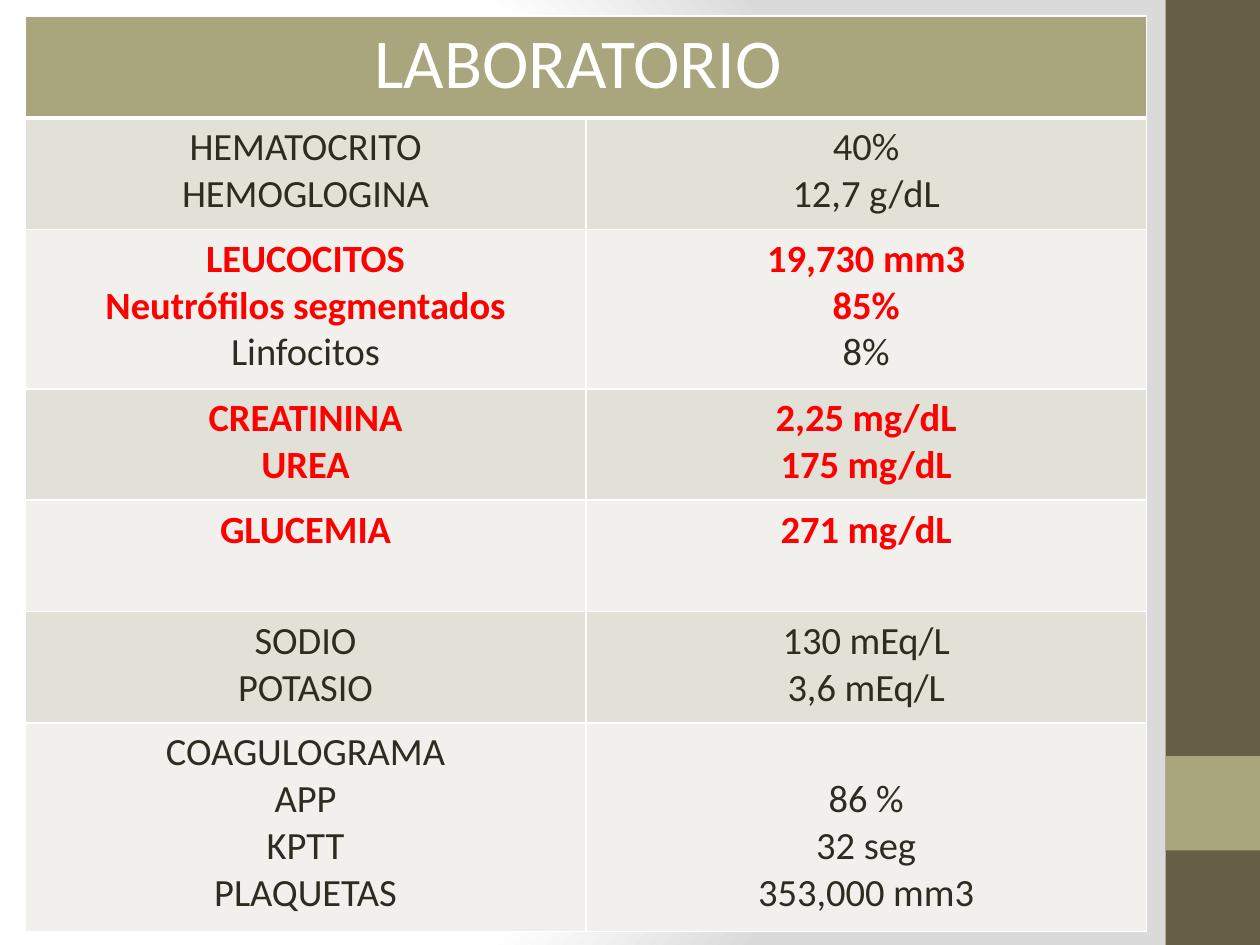
from pptx import Presentation
from pptx.dml.color import RGBColor
from pptx.enum.shapes import MSO_SHAPE
from pptx.enum.text import PP_ALIGN
from pptx.oxml import parse_xml
from pptx.oxml.ns import nsdecls, qn
from pptx.util import Pt

WHITE = RGBColor(0xFF, 0xFF, 0xFF)
INK = RGBColor(0x2F, 0x2B, 0x20)
RED = RGBColor(0xFF, 0x00, 0x00)
BROWN = RGBColor(0x67, 0x5E, 0x47)
OLIVE = RGBColor(0xA9, 0xA5, 0x7C)
BAND_DARK = RGBColor(0xE2, 0xE1, 0xD7)
BAND_LIGHT = RGBColor(0xF1, 0xF0, 0xEC)
GREY = RGBColor(0xDA, 0xDA, 0xDA)

NORMAL = {"size": Pt(22), "bold": False, "name": "Calibri"}
ALERT = {**NORMAL, "bold": True}
TITLE = {**NORMAL, "size": Pt(40)}
LINE_HEIGHT = 26.85
MARGIN = 3.6

# Row height, number of leading lines out of range, names, results
RESULTS = [
    (63.6, 0, ["HEMATOCRITO", "HEMOGLOGINA"], ["40%", "12,7 g/dL"]),
    (91.2, 2, ["LEUCOCITOS", "Neutrófilos segmentados", "Linfocitos"],
     ["19,730 mm3", "85%", "8%"]),
    (63.6, 2, ["CREATININA", "UREA"], ["2,25 mg/dL", "175 mg/dL"]),
    (63.6, 1, ["GLUCEMIA"], ["271 mg/dL"]),
    (63.6, 0, ["SODIO", "POTASIO"], ["130 mEq/L", "3,6 mEq/L"]),
    (119.4, 0, ["COAGULOGRAMA", "APP", "KPTT", "PLAQUETAS"],
     ["86 %", "32 seg", "353,000 mm3"]),
]


def style_cell(cell, fill, bottom=1):
    """Give the cell white borders and a solid fill; bottom is in points."""
    tcPr = cell._tc.get_or_add_tcPr()
    for side, width in (("L", 1), ("R", 1), ("T", 1), ("B", bottom)):
        tcPr.append(parse_xml(
            f'<a:ln{side} {nsdecls("a")} w="{Pt(width)}"><a:solidFill>'
            f'<a:srgbClr val="{WHITE}"/></a:solidFill></a:ln{side}>'))
    cell.fill.solid()
    cell.fill.fore_color.rgb = fill


def add_line(p, text, color, fmt):
    p.alignment = PP_ALIGN.CENTER
    r = p.add_run()
    r.text = text
    for name, value in fmt.items():
        setattr(r.font, name, value)
    r.font.color.rgb = color


prs = Presentation()
prs.slide_width, prs.slide_height = Pt(720), Pt(540)
s = prs.slides.add_slide(prs.slide_layouts[6])

# Background
s.background.fill.gradient()
grad = s.element.find(".//" + qn("a:gradFill"))
stops = "".join(f'<a:gs pos="{pos * 1000}"><a:srgbClr val="{color}"/></a:gs>'
                for pos, color in ((0, WHITE), (75, WHITE), (100, GREY)))
grad.getparent().replace(grad, parse_xml(
    f'<a:gradFill {nsdecls("a")} rotWithShape="1"><a:gsLst>{stops}</a:gsLst>'
    '<a:path path="circle"><a:fillToRect l="20000" t="50000" r="100000" b="50000"/>'
    '</a:path></a:gradFill>'))

# Side bar
for top, height, color in ((0, 540, BROWN), (432, 54, OLIVE)):
    sp = s.shapes.add_shape(MSO_SHAPE.RECTANGLE, Pt(666), Pt(top), Pt(54), Pt(height))
    sp.shadow.inherit = False
    sp.fill.solid()
    sp.fill.fore_color.rgb = color
    sp.line.fill.background()

# Laboratory table
table = s.shapes.add_table(len(RESULTS) + 1, 2, Pt(14.4), Pt(9.2), Pt(640.8), Pt(523)).table
for column in table.columns:
    column.width = Pt(320.4)

table.rows[0].height = Pt(58.3)
title = table.cell(0, 0)
title.merge(table.cell(0, 1))
for cell in table.rows[0].cells:
    style_cell(cell, OLIVE, bottom=3)
add_line(title.text_frame.paragraphs[0], "LABORATORIO ", WHITE, TITLE)

for i, (height, alerts, names, values) in enumerate(RESULTS, start=1):
    table.rows[i].height = Pt(height)
    for j, lines in enumerate((names, values)):
        cell = table.cell(i, j)
        style_cell(cell, BAND_DARK if i % 2 else BAND_LIGHT)
        # Results align with the last names of the row
        cell.margin_top = Pt(MARGIN + LINE_HEIGHT * (len(names) - len(lines)))
        tf = cell.text_frame
        for k, text in enumerate(lines):
            p = tf.add_paragraph() if k else tf.paragraphs[0]
            alert = k < alerts
            add_line(p, text, RED if alert else INK, ALERT if alert else NORMAL)

prs.save("out.pptx")
